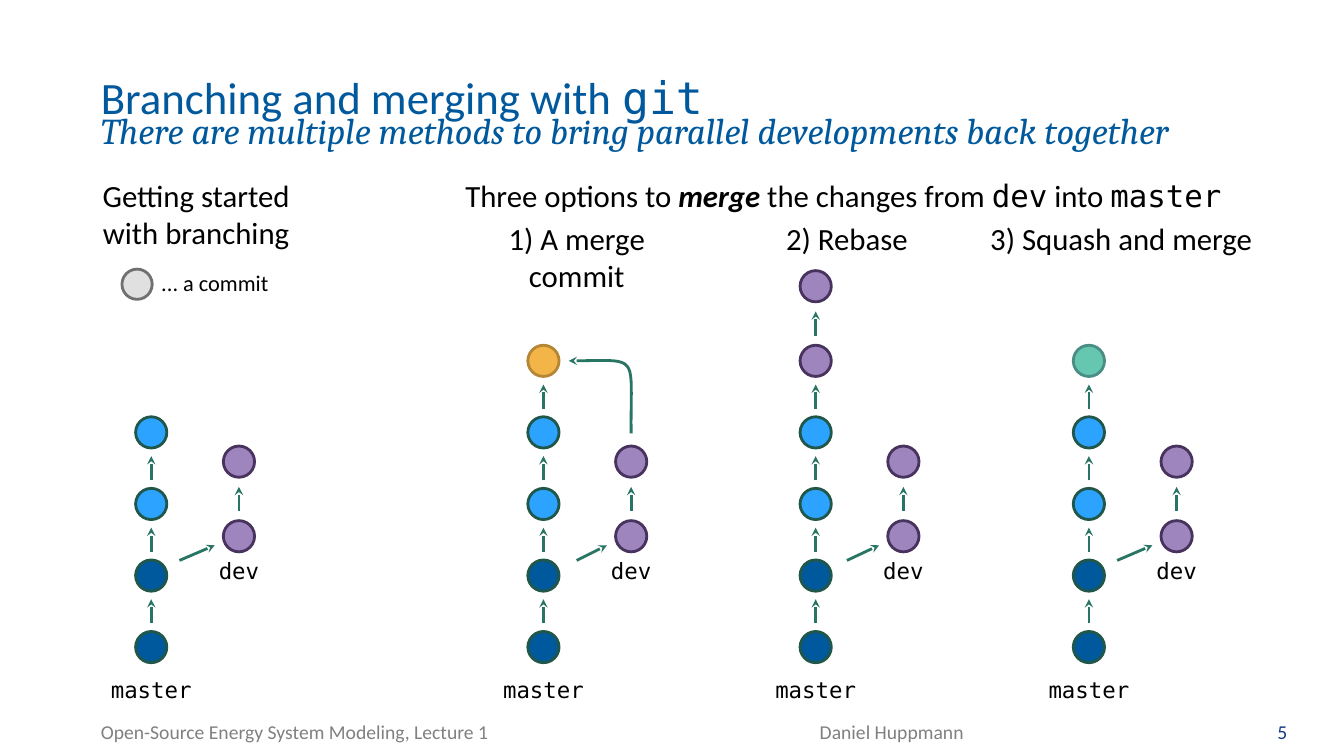
import pptx
import pptx.util
import pptx.dml.color
import pptx.enum.shapes
import pptx.enum.text
import pptx.oxml.ns
import lxml.etree

Inches = pptx.util.Inches
ALIGN = pptx.enum.text.PP_ALIGN
SHAPE = pptx.enum.shapes.MSO_SHAPE
qn = pptx.oxml.ns.qn
MONO = "DejaVu Sans Mono"
COLORS = {
    "heading": "00599D", "text": "000000", "footer": "808080", "number": "143C86",
    "arrow": "287563",
}
# Fill and outline of each kind of commit
COMMITS = {
    "old": ("00599D", "20574A"), "new": ("2BA3FF", "20574A"),
    "dev": ("9F85BD", "47335E"), "merged": ("F3B548", "B48635"),
    "squashed": ("66C7B0", "498D84"), "legend": ("E0E0E0", "707070"),
}


def rgb(value):
    return pptx.dml.color.RGBColor.from_string(value)


def write_text(box, text, size, color="text", font="Calibri", align=ALIGN.LEFT, more=()):
    frame = box.text_frame
    frame.word_wrap = True
    frame.auto_size = pptx.enum.text.MSO_AUTO_SIZE.NONE
    frame.vertical_anchor = pptx.enum.text.MSO_ANCHOR.TOP
    frame.margin_left = frame.margin_right = frame.margin_top = frame.margin_bottom = 0
    para = frame.paragraphs[0]
    para.text = text
    para.alignment = align
    para.space_before = pptx.util.Pt(0)
    fonts = [font] * len(para.runs)
    for extra_text, extra_font in more:
        para.add_run().text = extra_text
        fonts.append(extra_font)
    for span, name in zip(para.runs, fonts):
        span.font.name = name
        span.font.size = pptx.util.Pt(size)
        span.font.bold = False
        span.font.color.rgb = rgb(COLORS[color])
    return para


deck = pptx.Presentation()
deck.slide_width, deck.slide_height = Inches(13.33), Inches(7.5)
page = deck.slides.add_slide(deck.slide_layouts.get_by_name("Comparison"))
holders = {holder.placeholder_format.idx: holder for holder in page.placeholders}
shapes = page.shapes

# Title and body placeholders
places = {
    0: (1, 0.69, 11.45, 1.25), 1: (1, 1.75, 1.89, 0.8),
    2: (4.07, 1.75, 8.59, 0.39), 3: (1, 1.07, 11.65, 0.47),
}
for index, place in places.items():
    box = holders[index]
    box.left, box.top, box.width, box.height = [Inches(length) for length in place]
holders[4].element.getparent().remove(holders[4].element)

write_text(holders[0], "Branching and merging with ", 32, "heading", more=[("git", MONO)])
started = write_text(holders[1], "Getting started\vwith branching", 22, align=ALIGN.CENTER)
options = write_text(
    holders[2], "Three options to ", 22, align=ALIGN.CENTER,
    more=[("merge", "Calibri"), (" the changes from ", "Calibri"), ("dev", MONO),
          (" into ", "Calibri"), ("master", MONO)])
options.runs[1].font.bold = options.runs[1].font.italic = True
subtitle = write_text(
    holders[3], "There are multiple methods to bring parallel developments back together",
    26, "heading", "Cambria")
subtitle.runs[0].font.italic = True
for para in (started, options, subtitle):
    properties = para._p.get_or_add_pPr()
    properties.set("marL", "0")
    properties.set("indent", "0")
    lxml.etree.SubElement(properties, qn("a:buNone"))

# Footer, option headings and legend text
labels = [
    ("Open-Source Energy System Modeling, Lecture 1", 1, 7.14, 6.93, 0.35, 14, "footer", ALIGN.LEFT),
    ("Daniel Huppmann", 8.13, 7.14, 4.41, 0.35, 14, "footer", ALIGN.LEFT),
    ("5", 12.67, 7.14, 0.53, 0.35, 14, "number", ALIGN.LEFT),
    ("1) A merge commit", 4.57, 2.18, 2.3, 0.39, 22, "text", ALIGN.CENTER),
    ("2) Rebase", 7.22, 2.18, 2.36, 0.39, 22, "text", ALIGN.CENTER),
    ("3) Squash and merge", 9.8, 2.18, 2.64, 0.39, 22, "text", ALIGN.CENTER),
    ("... a commit", 1.52, 2.67, 1.22, 0.24, 16, "text", ALIGN.CENTER),
]
for text, left, top, width, height, size, color, align in labels:
    box = shapes.add_textbox(Inches(left), Inches(top), Inches(width), Inches(height))
    write_text(box, text, size, color, align=align)

# Branch diagrams: trunk centre, start of the branch arrow, commits added on top
diagrams = [
    (1.5, 0.28, []),
    (5.39, 0.33, ["merged"]),
    (8.09, 0.31, ["dev", "dev"]),
    (10.8, 0.28, ["squashed"]),
]
TRUNK_BOTTOM, TRUNK_STEP = 6.42, 0.71
DEV_BOTTOM, DEV_STEP, DEV_SHIFT = 5.32, 0.74, 0.87
commits = [("legend", 1.36, 2.82, 0.3)]
arrows = []
for center, branch_start, added in diagrams:
    trunk = ["old", "old", "new", "new"] + added
    y = TRUNK_BOTTOM
    for level, kind in enumerate(trunk):
        commits.append((kind, center, y, 0.31))
        if level < len(trunk) - 1:
            step = DEV_STEP if level == 4 else TRUNK_STEP
            gap = step / 2 - 0.12
            arrows.append((center, y - gap, center, y - step + gap))
            y -= step

    dev = center + DEV_SHIFT
    gap = DEV_STEP / 2 - 0.12
    commits += [("dev", dev, DEV_BOTTOM, 0.31), ("dev", dev, DEV_BOTTOM - DEV_STEP, 0.31)]
    arrows.append((dev, DEV_BOTTOM - gap, dev, DEV_BOTTOM - DEV_STEP + gap))
    arrows.append((center + branch_start, 5.56, center + 0.63, 5.41))

    for name, x, top, width in (("master", center, 6.71, 1.01), ("dev", dev, 5.53, 0.61)):
        box = shapes.add_textbox(Inches(x - width / 2), Inches(top), Inches(width), Inches(0.27))
        write_text(box, name, 16, font=MONO, align=ALIGN.CENTER)
        box.text_frame.word_wrap = False

# Commits
for kind, x, y, size in commits:
    circle = shapes.add_shape(
        SHAPE.OVAL, Inches(x - size / 2), Inches(y - size / 2), Inches(size), Inches(size))
    fill, outline = COMMITS[kind]
    circle.shadow.inherit = False
    circle.fill.solid()
    circle.fill.fore_color.rgb = rgb(fill)
    circle.line.color.rgb = rgb(outline)
    circle.line.width = pptx.util.Pt(2)

# Curved arrow from dev back to the merge commit
controls = [(6.26, 4.3), (6.25, 3.48), (6.37, 3.58), (5.64, 3.58)]
curve = []
for number in range(21):
    t = number / 20
    weights = [(1 - t) ** 3, 3 * t * (1 - t) ** 2, 3 * t * t * (1 - t), t ** 3]
    curve.append([Inches(sum(weight * point[axis] for weight, point in zip(weights, controls)))
                  for axis in (0, 1)])
builder = shapes.build_freeform(*curve[0])
builder.add_line_segments(curve[1:], close=False)
merge_arrow = builder.convert_to_shape()
merge_arrow.fill.background()
merge_arrow.shadow.inherit = False

# Straight arrows, then one style for all
lines = [merge_arrow]
for ends in arrows:
    connector = shapes.add_connector(
        pptx.enum.shapes.MSO_CONNECTOR.STRAIGHT, *[Inches(length) for length in ends])
    lines.append(connector)
for line in lines:
    line.line.color.rgb = rgb(COLORS["arrow"])
    line.line.width = pptx.util.Pt(2)
    lxml.etree.SubElement(line.line._get_or_add_ln(), qn("a:tailEnd"), type="stealth")
    if line is not merge_arrow:
        lxml.etree.SubElement(line._element.spPr, qn("a:effectLst"))

deck.save("out.pptx")
